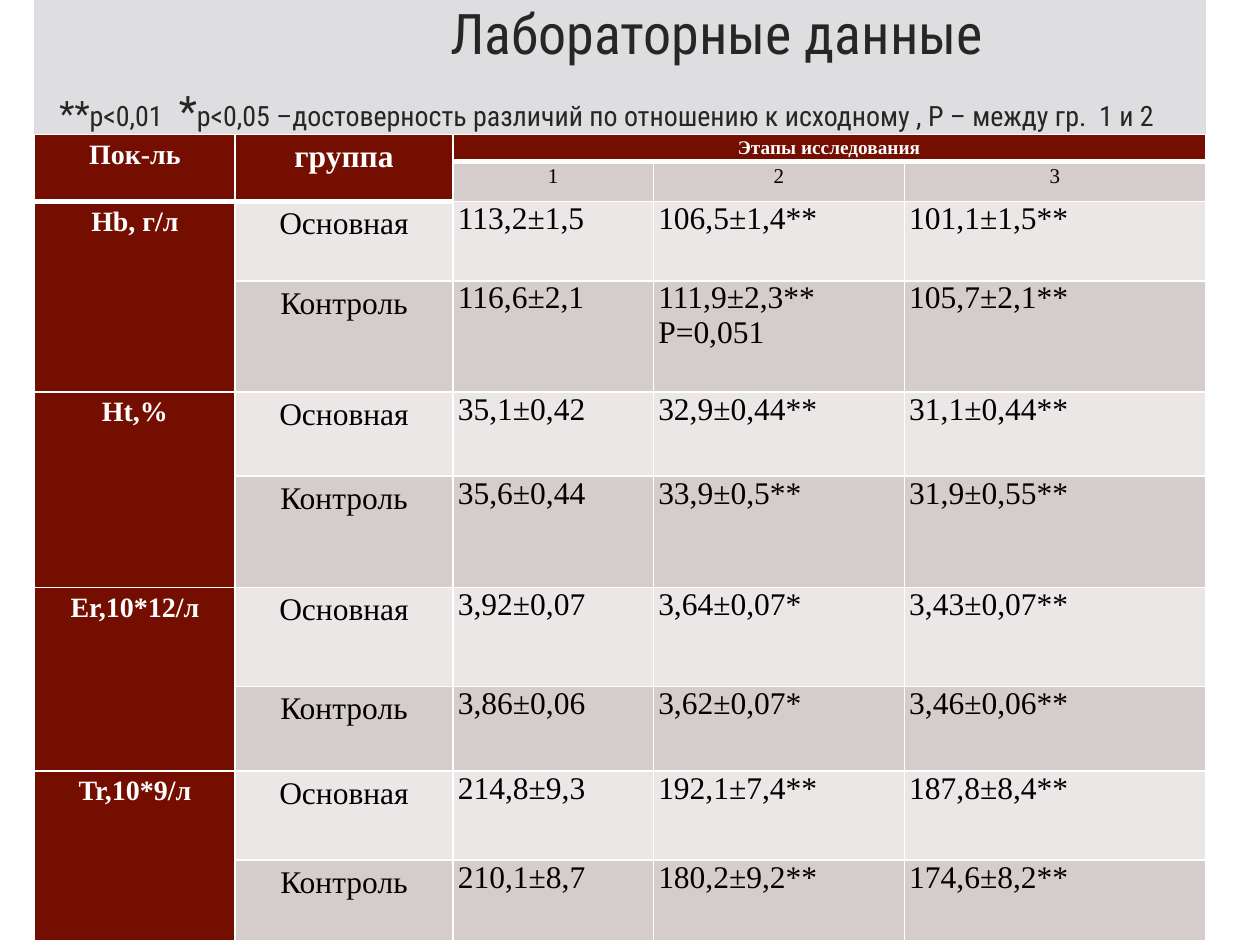
from lxml import etree
from pptx import Presentation
from pptx.dml.color import RGBColor
from pptx.enum.shapes import MSO_SHAPE
from pptx.enum.text import MSO_ANCHOR, PP_ALIGN
from pptx.oxml.ns import qn
from pptx.util import Cm, Pt

COLORS = {
    "band": "DEDEE0", "heading": "262626", "white": "FFFFFF", "black": "000000",
    "header": "730E00", "light": "EBE7E7", "dark": "D5CCCC",
}
HEADING_FONT, TABLE_FONT = "Roboto Condensed", "Times New Roman"

COLUMN_WIDTHS = [4.04, 4.39, 4.04, 5.06, 6.07]
ROW_HEIGHTS = [0.54, 0.81, 1.6, 2.24, 1.7, 2.24, 2.0, 1.7, 1.8, 1.62]
GROUPS = ["Основная", "Контроль"]
# Indicator, then the three stages for each group
INDICATORS = [
    ("Hb, г/л", [["113,2±1,5", "106,5±1,4**", "101,1±1,5**"],
                 ["116,6±2,1", "111,9±2,3**\nP=0,051", "105,7±2,1**"]]),
    ("Ht,%", [["35,1±0,42", "32,9±0,44**", "31,1±0,44**"],
              ["35,6±0,44", "33,9±0,5**", "31,9±0,55**"]]),
    ("Er,10*12/л", [["3,92±0,07", "3,64±0,07*", "3,43±0,07**"],
                    ["3,86±0,06", "3,62±0,07*", "3,46±0,06**"]]),
    ("Tr,10*9/л", [["214,8±9,3", "192,1±7,4**", "187,8±8,4**"],
                   ["210,1±8,7", "180,2±9,2**", "174,6±8,2**"]]),
]


def rgb(name):
    return RGBColor.from_string(COLORS[name])


def add_run(paragraph, text, size, font, color, bold=False):
    run = paragraph.add_run()
    run.text = text
    run.font.size = Pt(size)
    run.font.name = font
    run.font.bold = bold
    run.font.color.rgb = rgb(color)


def add_heading(slide, left, top, width, height):
    band = slide.shapes.add_shape(MSO_SHAPE.RECTANGLE, Cm(left), Cm(top), Cm(width), Cm(height))
    band.shadow.inherit = False
    band.fill.solid()
    band.fill.fore_color.rgb = rgb("band")
    band.line.color.rgb = rgb("band")
    band.line.width = Pt(0.75)

    frame = band.text_frame
    frame.word_wrap = True
    frame.vertical_anchor = MSO_ANCHOR.BOTTOM
    frame.margin_top, frame.margin_bottom = Cm(0), Cm(0.2)
    title, legend = frame.paragraphs[0], frame.add_paragraph()
    for paragraph, indent in ((title, 8.13), (legend, 0.25)):
        paragraph.alignment = PP_ALIGN.LEFT
        paragraph._p.get_or_add_pPr().set("marL", str(Cm(indent)))
    legend.space_before = Pt(11)

    add_run(title, "Лабораторные данные", 32, HEADING_FONT, "heading")
    for text, size in (
        ("**", 20), ("p<0,01 ", 16), (" *", 24),
        ("p<0,05 –достоверность различий по отношению к исходному , P – между гр.  1 и 2", 16),
    ):
        add_run(legend, text, size, HEADING_FONT, "heading")


def edge_weight(row, column):
    """Points of the line above a row: thick under the header cells."""
    return 3 if row == (2 if column < 2 else 1) else 1


def set_borders(cell, row, column):
    properties = cell._tc.get_or_add_tcPr()
    weights = {"a:lnL": 1, "a:lnR": 1, "a:lnT": edge_weight(row, column),
               "a:lnB": edge_weight(row + 1, column)}
    for position, (tag, weight) in enumerate(weights.items()):
        line = etree.Element(qn(tag), w=str(Pt(weight)))
        fill = etree.SubElement(line, qn("a:solidFill"))
        etree.SubElement(fill, qn("a:srgbClr"), val=COLORS["white"])
        properties.insert(position, line)


def write_cell(cell, text, size, fill, color="black", bold=False, centered=True):
    cell.fill.solid()
    cell.fill.fore_color.rgb = rgb(fill)
    for number, line in enumerate(text.split("\n")):
        frame = cell.text_frame
        paragraph = frame.add_paragraph() if number else frame.paragraphs[0]
        if centered:
            paragraph.alignment = PP_ALIGN.CENTER
            paragraph.line_spacing = 1.15
        add_run(paragraph, line, size, TABLE_FONT, color, bold)


def add_results(slide, left, top):
    table = slide.shapes.add_table(
        len(ROW_HEIGHTS), len(COLUMN_WIDTHS), Cm(left), Cm(top),
        Cm(sum(COLUMN_WIDTHS)), Cm(sum(ROW_HEIGHTS))).table
    for column, width in zip(table.columns, COLUMN_WIDTHS):
        column.width = Cm(width)
    for row, height in zip(table.rows, ROW_HEIGHTS):
        row.height = Cm(height)
    for r in range(len(ROW_HEIGHTS)):
        for c in range(len(COLUMN_WIDTHS)):
            cell = table.cell(r, c)
            cell.margin_left = cell.margin_right = Cm(0.1)
            cell.margin_top = cell.margin_bottom = Cm(0)
            set_borders(cell, r, c)

    def write_header(text, size, first, last):
        table.cell(*first).merge(table.cell(*last))
        write_cell(table.cell(*first), text, size, "header", "white", bold=True)

    # Header rows
    write_header("Пок-ль", 16, (0, 0), (1, 0))
    write_header("группа", 18, (0, 1), (1, 1))
    write_header("Этапы исследования", 11, (0, 2), (0, 4))
    for stage in (1, 2, 3):
        write_cell(table.cell(1, stage + 1), str(stage), 12, "dark")

    # Two rows for each indicator
    for i, (indicator, results) in enumerate(INDICATORS):
        first_row = 2 + 2 * i
        write_header(indicator, 16, (first_row, 0), (first_row + 1, 0))
        for g, (group, values) in enumerate(zip(GROUPS, results)):
            fill = ("light", "dark")[g]
            write_cell(table.cell(first_row + g, 1), group, 18, fill)
            for c, value in enumerate(values, start=2):
                write_cell(table.cell(first_row + g, c), value, 18, fill, centered=False)


def main():
    prs = Presentation()
    prs.slide_width, prs.slide_height = Cm(25.4), Cm(19.05)
    slide = prs.slides.add_slide(prs.slide_layouts[6])
    add_heading(slide, 0.7, 0, 23.6, 2.92)
    add_results(slide, 0.7, 2.71)
    prs.save("out.pptx")


if __name__ == "__main__":
    main()
